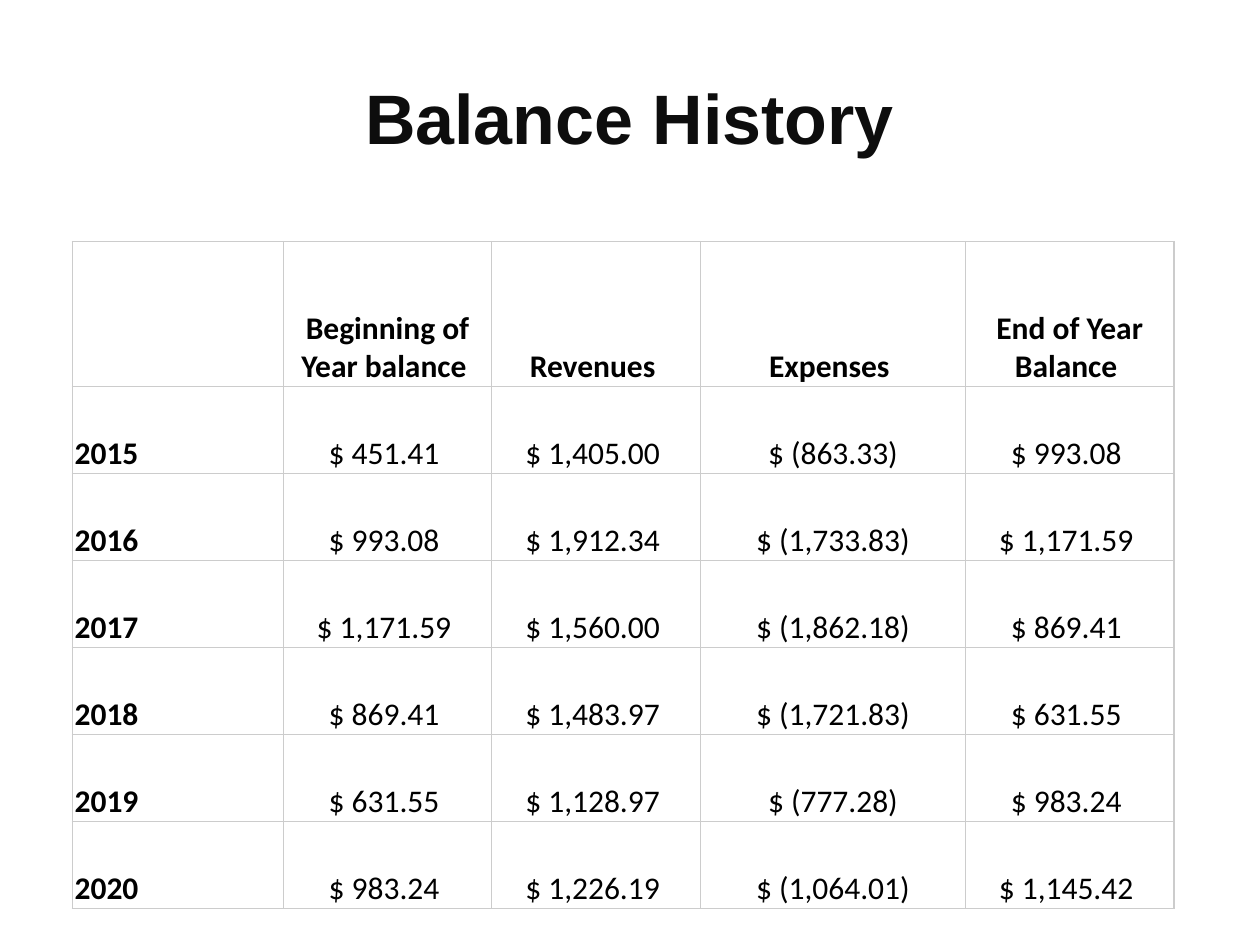
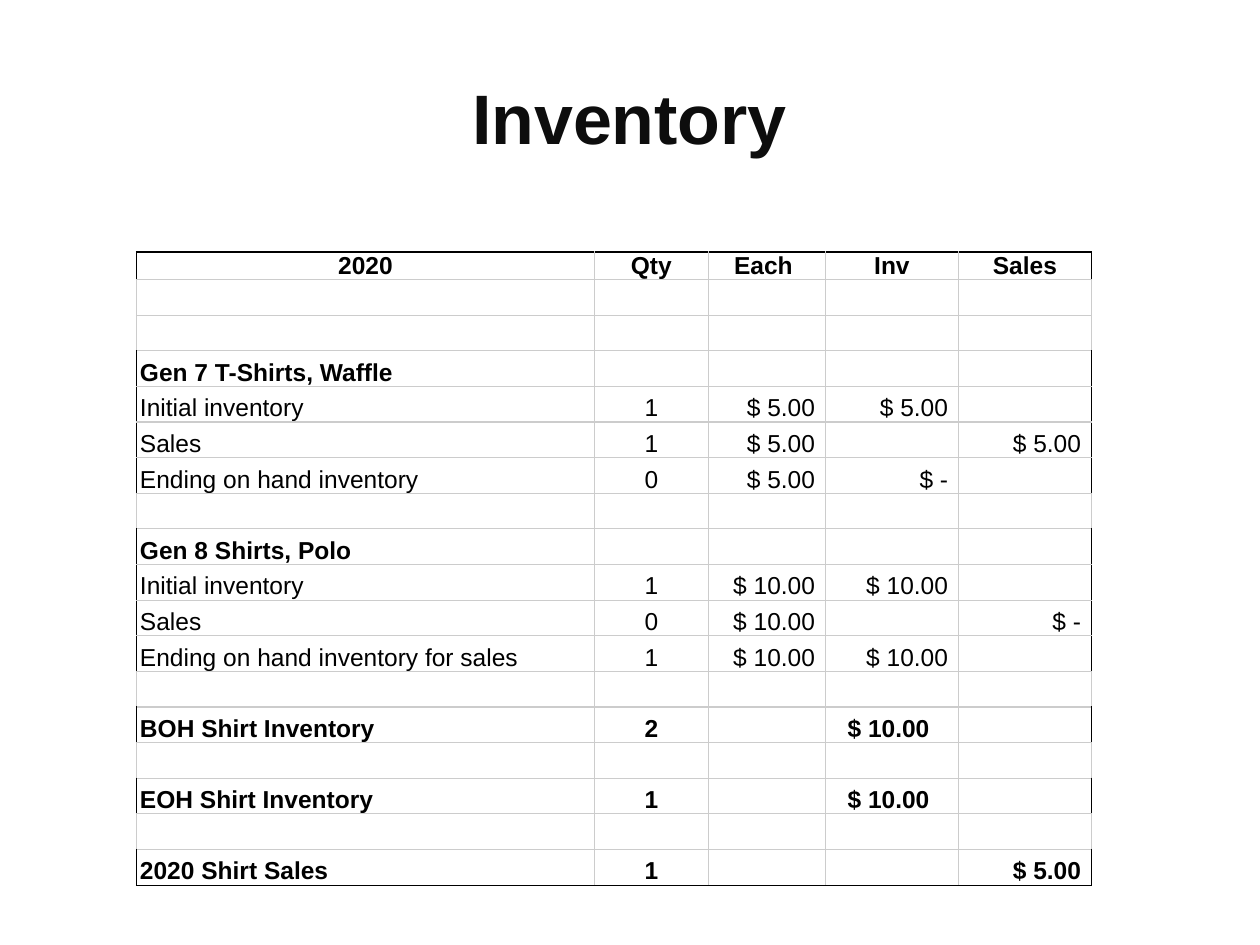
from dataclasses import dataclass
from typing import Optional

from lxml import etree
from pptx import Presentation
from pptx.dml.color import RGBColor
from pptx.enum.text import MSO_ANCHOR, PP_ALIGN
from pptx.oxml.ns import qn
from pptx.util import Pt

LEFT, CENTER, RIGHT = PP_ALIGN.LEFT, PP_ALIGN.CENTER, PP_ALIGN.RIGHT
MIDDLE, BOTTOM = MSO_ANCHOR.MIDDLE, MSO_ANCHOR.BOTTOM

TITLE_COLOR = "0D0D0D"
BLACK = "000000"
GRID = "CCCCCC"
TITLE_ONLY = 5


@dataclass
class Entry:
    text: str
    align: PP_ALIGN = CENTER
    bold: bool = False
    black_sides: str = ""


@dataclass
class Ledger:
    title: str
    left: float
    top: float
    widths: list[float]
    header_height: float
    row_height: float
    font: str
    size: float
    inset: float
    rows: list[list[Entry]]


BALANCE_HEADER = ("", "Beginning of Year balance ", "Revenues ", "Expenses ",
                  "End of Year Balance ")
BALANCES = [
    ("2015", "$ 451.41 ", "$ 1,405.00 ", "$ (863.33)", "$ 993.08 "),
    ("2016", "$ 993.08 ", "$ 1,912.34 ", "$ (1,733.83)", "$ 1,171.59 "),
    ("2017", "$ 1,171.59 ", "$ 1,560.00 ", "$ (1,862.18)", "$ 869.41 "),
    ("2018", "$ 869.41 ", "$ 1,483.97 ", "$ (1,721.83)", "$ 631.55 "),
    ("2019", "$ 631.55 ", "$ 1,128.97 ", "$ (777.28)", "$ 983.24 "),
    ("2020", "$ 983.24 ", "$ 1,226.19 ", "$ (1,064.01)", "$ 1,145.42 "),
]

EMPTY_ROW = ("", "", "", "", "")
INVENTORY = [
    ("2020", "Qty", "Each ", "Inv", "Sales"),
    EMPTY_ROW,
    EMPTY_ROW,
    ("Gen 7 T-Shirts, Waffle", "", "", "", ""),
    ("Initial inventory", "1", "$ 5.00 ", "$ 5.00 ", ""),
    ("Sales", "1", "$ 5.00 ", "", "$ 5.00 "),
    ("Ending on hand inventory", "0", "$ 5.00 ", "$ - ", ""),
    EMPTY_ROW,
    ("Gen 8 Shirts, Polo", "", "", "", ""),
    ("Initial inventory", "1", "$ 10.00 ", "$ 10.00 ", ""),
    ("Sales", "0", "$ 10.00 ", "", "$ - "),
    ("Ending on hand inventory for sales", "1", "$ 10.00 ", "$ 10.00 ", ""),
    EMPTY_ROW,
    ("BOH Shirt Inventory", "2", "", "$ 10.00 ", ""),
    EMPTY_ROW,
    ("EOH Shirt Inventory", "1", "", "$ 10.00 ", ""),
    EMPTY_ROW,
    ("2020 Shirt Sales", "1", "", "", "$ 5.00 "),
]


def balance_rows() -> list[list[Entry]]:
    header = [Entry(text, bold=True) for text in BALANCE_HEADER]
    years = [[Entry(year, LEFT, True), *map(Entry, amounts)]
             for year, *amounts in BALANCES]
    return [header, *years]


def inventory_entry(row: int, column: int) -> Entry:
    texts = INVENTORY[row]
    is_header = row == 0
    is_detail = texts[2] != "" and not is_header
    is_total = not is_detail and not is_header
    last_row, last_column = len(INVENTORY) - 1, len(texts) - 1
    align = (LEFT, CENTER, RIGHT, CENTER if is_total else RIGHT, RIGHT)[column]
    filled = texts[0] != ""
    sides = {"L": filled and column == 0, "R": filled and column == last_column,
             "T": is_header, "B": row == last_row}
    return Entry(texts[column], CENTER if is_header else align, not is_detail,
                 "".join(side for side, black in sides.items() if black))


def inventory_rows() -> list[list[Entry]]:
    return [[inventory_entry(row, column) for column in range(len(EMPTY_ROW))]
            for row in range(len(INVENTORY))]


def rgb(color: str) -> RGBColor:
    return RGBColor.from_string(color)


def add_line(parent, tag: str, color: str, width: float, position: int) -> None:
    line = etree.Element(qn(f"a:{tag}"), w=str(Pt(width)))
    fill = etree.SubElement(line, qn("a:solidFill"))
    etree.SubElement(fill, qn("a:srgbClr"), val=color)
    parent.insert(position, line)


def write(frame, text: str, *, font: str, size: float, color: str = BLACK,
          bold: bool = False, align: PP_ALIGN = LEFT,
          outline: Optional[float] = None) -> None:
    paragraph = frame.paragraphs[0]
    paragraph.alignment = align
    if not text:
        etree.SubElement(paragraph._p, qn("a:endParaRPr"), sz=str(int(size * 100)))
        return
    run = paragraph.add_run()
    run.text = text
    run.font.name = font
    run.font.size = Pt(size)
    run.font.bold = bold
    run.font.color.rgb = rgb(color)
    if outline:
        add_line(run._r.get_or_add_rPr(), "ln", color, outline, 0)


def add_title(slide, text: str) -> None:
    title = slide.shapes.title
    title.left, title.top = Pt(36), Pt(21.6)
    title.width, title.height = Pt(647.3), Pt(90)
    title.text_frame.vertical_anchor = MIDDLE
    write(title.text_frame, text, font="Arial", size=40, color=TITLE_COLOR,
          bold=True, align=CENTER, outline=1.5)


def fill_cell(cell, entry: Entry, ledger: Ledger) -> None:
    cell.margin_left = cell.margin_right = Pt(ledger.inset)
    cell.margin_top = cell.margin_bottom = Pt(0)
    cell.vertical_anchor = BOTTOM
    properties = cell._tc.get_or_add_tcPr()
    for position, side in enumerate("LRTB"):
        color = BLACK if side in entry.black_sides else GRID
        add_line(properties, f"ln{side}", color, 0.75, position)
    cell.fill.background()
    write(cell.text_frame, entry.text, font=ledger.font, size=ledger.size,
          bold=entry.bold, align=entry.align)


def add_ledger(slide, ledger: Ledger) -> None:
    heights = [ledger.header_height] + [ledger.row_height] * (len(ledger.rows) - 1)
    table = slide.shapes.add_table(
        len(heights), len(ledger.widths), Pt(ledger.left), Pt(ledger.top),
        Pt(sum(ledger.widths)), Pt(sum(heights))).table
    table.first_row = table.horz_banding = False
    for column, width in zip(table.columns, ledger.widths):
        column.width = Pt(width)
    for row, height, entries in zip(table.rows, heights, ledger.rows):
        row.height = Pt(height)
        for cell, entry in zip(row.cells, entries):
            fill_cell(cell, entry, ledger)


def main() -> None:
    deck = Presentation()
    deck.slide_width, deck.slide_height = Pt(720), Pt(540)
    ledgers = [
        Ledger("Balance History", 41.2, 137.9, [120.7, 119.2, 119.2, 151.4, 119.2],
               82.9, 49.7, "Calibri", 18, 1.5, balance_rows()),
        Ledger("Inventory", 78, 144, [261.7, 65, 67, 76, 76],
               13.9, 20.37, "Arial", 14, 2, inventory_rows()),
    ]
    for ledger in ledgers:
        slide = deck.slides.add_slide(deck.slide_layouts[TITLE_ONLY])
        add_title(slide, ledger.title)
        add_ledger(slide, ledger)
    deck.save("out.pptx")


if __name__ == "__main__":
    main()
